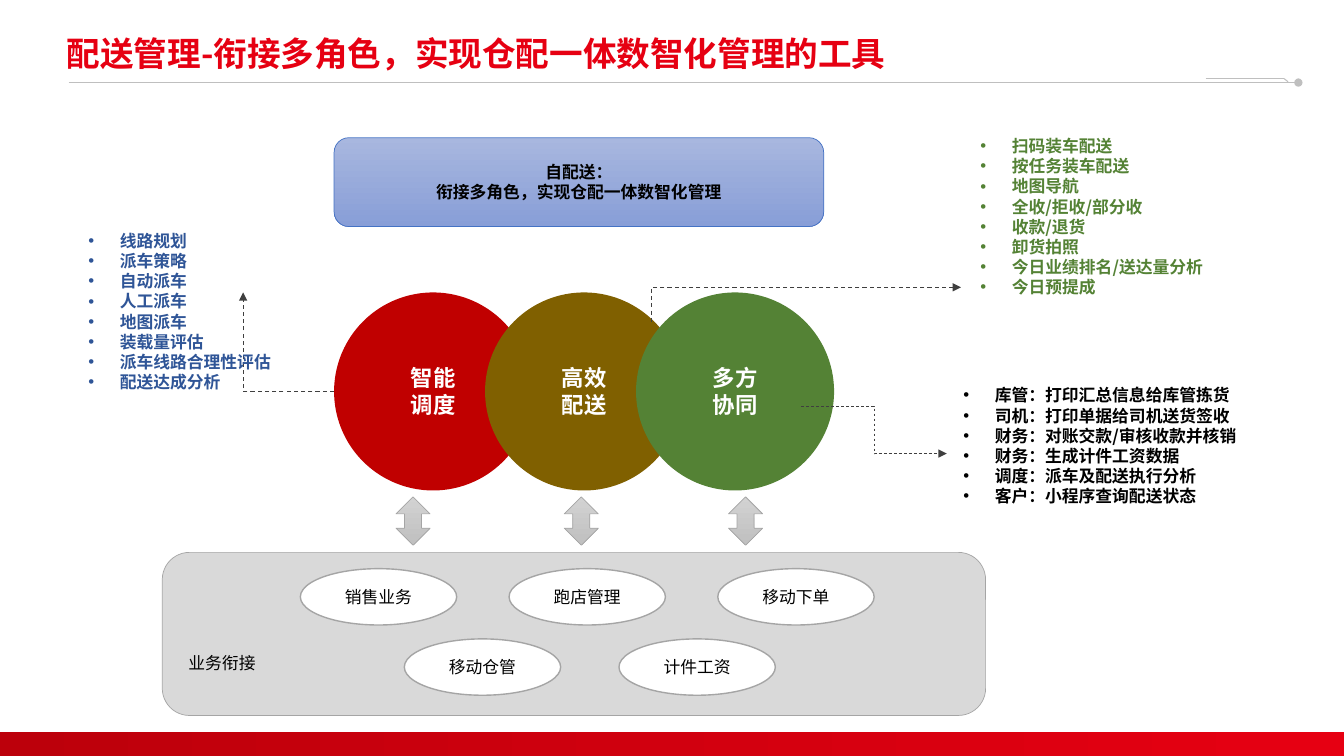
from dataclasses import dataclass

from pptx import Presentation
from pptx.dml.color import RGBColor
from pptx.enum.shapes import MSO_CONNECTOR, MSO_SHAPE
from pptx.enum.text import MSO_ANCHOR, PP_ALIGN
from pptx.oxml.ns import qn
from pptx.util import Cm, Pt
from lxml.etree import SubElement


@dataclass(frozen=True)
class Theme:
    font: str = "Noto Sans CJK SC"
    shape_font: str = "Calibri"
    title_size: int = 24
    circle_size: int = 16
    body_size: int = 12
    red: str = "E60012"
    dark_red: str = "BC000B"
    rule: str = "BFBFBF"
    black: str = "000000"
    white: str = "FFFFFF"
    crimson: str = "C00000"
    olive: str = "806000"
    green: str = "548235"
    navy: str = "2F5597"
    blue: str = "4472C4"
    banner: tuple = ("A8B7DF", "889ED7")
    arrow: tuple = ("D2D2D2", "C0C0C0")
    panel: str = "D9D9D9"
    outline: str = "A5A5A5"
    dash: str = "3F3F3F"


THEME = Theme()


@dataclass(frozen=True)
class Box:
    """A rectangle in centimetres."""
    left: float
    top: float
    width: float
    height: float

    def inner(self, left, top, width, height):
        return Box(self.left + left, self.top + top, width, height)

    def lengths(self):
        return [Cm(v) for v in (self.left, self.top, self.width, self.height)]


def rgb(color):
    return RGBColor.from_string(color)


def add_shape(page, kind, box, fill, line=None, line_width=0.5, angle=270):
    shape = page.shapes.add_shape(kind, *box.lengths())
    shape.shadow.inherit = False
    if isinstance(fill, tuple):
        shape.fill.gradient()
        shape.fill.gradient_angle = angle
        for stop, color in zip(shape.fill.gradient_stops, fill):
            stop.color.rgb = rgb(color)
    else:
        shape.fill.solid()
        shape.fill.fore_color.rgb = rgb(fill)
    if line:
        shape.line.color.rgb = rgb(line)
        shape.line.width = Pt(line_width)
    else:
        shape.line.fill.background()
    return shape


def style(para, size, color, bold=False, font=THEME.font):
    para.font.name = font
    para.font.size = Pt(size)
    para.font.bold = bold
    para.font.color.rgb = rgb(color)


def write_centred(shape, lines, size, color, bold=False, font=THEME.font):
    frame = shape.text_frame
    frame.vertical_anchor = MSO_ANCHOR.MIDDLE
    frame.text = "\n".join(lines)
    for para in frame.paragraphs:
        para.alignment = PP_ALIGN.CENTER
        style(para, size, color, bold, font)


def add_line(page, start, end, color, width=0.75, preset="line", dashed=False, **ends):
    kind = MSO_CONNECTOR.STRAIGHT if preset == "line" else MSO_CONNECTOR.ELBOW
    line = page.shapes.add_connector(kind, *[Cm(v) for v in (*start, *end)])
    line.line.color.rgb = rgb(color)
    line.line.width = Pt(width)
    properties = line._element.spPr
    properties.find(qn("a:prstGeom")).set("prst", preset)
    outline = properties.find(qn("a:ln"))
    if dashed:
        SubElement(outline, qn("a:prstDash")).set("val", "dash")
    for end_name, end_type in ends.items():
        SubElement(outline, qn(f"a:{end_name}")).set("type", end_type)
    SubElement(properties, qn("a:effectLst"))


def add_heading(page, box, text):
    # Title with the decorated rule below it
    title = page.shapes.title
    title.left, title.top, title.width, title.height = box.lengths()
    frame = title.text_frame
    frame.text = text
    frame.word_wrap = False
    frame.margin_left = 0
    frame.vertical_anchor = MSO_ANCHOR.MIDDLE
    para = frame.paragraphs[0]
    para.alignment = PP_ALIGN.LEFT
    para.line_spacing = 0.9
    style(para, THEME.title_size, THEME.red, True)

    rule_y = box.top + 1.32
    step_y = rule_y - 0.1
    step_x = box.left + 30.68
    add_line(page, (box.left + 0.05, rule_y), (box.left + 31.04, rule_y), THEME.rule, tailEnd="oval")
    add_line(page, (box.left + 28.7, step_y), (step_x, step_y), THEME.rule)
    add_line(page, (step_x, step_y), (step_x + 0.1, step_y + 0.08), THEME.rule)


def add_circles(page, box, circles):
    # Overlapping circles, spread evenly from the left edge to the right edge
    diameter = box.height
    step = (box.width - diameter) / (len(circles) - 1)
    for index, (lines, color) in enumerate(circles):
        circle = add_shape(page, MSO_SHAPE.FLOWCHART_CONNECTOR,
                           box.inner(index * step, 0, diameter, diameter), color)
        write_centred(circle, lines, THEME.circle_size, THEME.white, True)


def add_bullets(page, box, items, color):
    frame = page.shapes.add_textbox(*box.lengths()).text_frame
    frame.word_wrap = True
    frame.text = "\n".join(items)
    for para in frame.paragraphs:
        properties = para._p.get_or_add_pPr()
        properties.set("marL", str(Cm(0.79)))
        properties.set("indent", str(-Cm(0.79)))
        SubElement(properties, qn("a:buFont")).set("typeface", "Arial")
        SubElement(properties, qn("a:buChar")).set("char", "•")
        style(para, THEME.body_size, color, True)


def add_banner(page, box, lines):
    banner = add_shape(page, MSO_SHAPE.ROUNDED_RECTANGLE, box, THEME.banner, THEME.blue)
    write_centred(banner, lines, THEME.body_size, THEME.black, True, THEME.shape_font)


def add_business_panel(page, box, label, rows):
    # Grey panel, its label and two rows of ovals
    add_shape(page, MSO_SHAPE.ROUNDED_RECTANGLE, box, THEME.panel, THEME.outline)
    frame = page.shapes.add_textbox(*box.inner(0.41, 2.41, 2.24, 0.76).lengths()).text_frame
    frame.word_wrap = False
    frame.text = label
    style(frame.paragraphs[0], THEME.body_size, THEME.black)
    for left, top, step, names in rows:
        for index, name in enumerate(names):
            oval = add_shape(page, MSO_SHAPE.OVAL, box.inner(left + index * step, top, 3.94, 1.42),
                             THEME.white, THEME.outline, 1)
            write_centred(oval, [name], THEME.body_size, THEME.black, font=THEME.shape_font)


def add_exchange_arrows(page, box, offsets):
    for offset in offsets:
        add_shape(page, MSO_SHAPE.UP_DOWN_ARROW, box.inner(offset, 0, 0.86, box.height),
                  THEME.arrow, THEME.outline)


def add_callout_lines(page, box):
    # Dashed elbows from the circles to their lists
    def at(x, y):
        return box.left + x, box.top + y

    add_line(page, at(0, 2.49), at(-2.29, 0), THEME.dash, preset="bentConnector2",
             dashed=True, tailEnd="triangle")
    add_line(page, at(11.77, 2.87), at(15.44, 4.06), THEME.dash, 0.5, "bentConnector3",
             True, tailEnd="triangle")
    add_line(page, at(15.8, -0.13), at(8, 0.74), THEME.dash, preset="bentConnector2",
             dashed=True, headEnd="triangle")


def main():
    deck = Presentation()
    deck.slide_width, deck.slide_height = Cm(33.87), Cm(19.05)
    page = deck.slides.add_slide(deck.slide_layouts[5])

    # Frame of the page
    add_shape(page, MSO_SHAPE.RECTANGLE, Box(0, 18.44, 33.87, 0.61),
              (THEME.dark_red, THEME.red), angle=0)
    add_heading(page, Box(1.68, 0.76, 25.6, 1.27), "配送管理-衔接多角色，实现仓配一体数智化管理的工具")

    # Delivery roles
    add_banner(page, Box(8.42, 3.47, 12.34, 2.24), ["自配送：", "衔接多角色，实现仓配一体数智化管理"])
    circles = Box(8.42, 7.37, 12.6, 4.99)
    add_circles(page, circles, [(["智能", "调度"], THEME.crimson),
                                (["高效", "配送"], THEME.olive),
                                (["多方", "协同"], THEME.green)])
    add_callout_lines(page, circles)
    add_bullets(page, Box(1.98, 5.69, 5.16, 4.37),
                ["线路规划", "派车策略", "自动派车", "人工派车", "地图派车", "装载量评估",
                 "派车线路合理性评估", "配送达成分析"], THEME.navy)
    add_bullets(page, Box(24.46, 3.3, 6.2, 4.37),
                ["扫码装车配送", "按任务装车配送", "地图导航", "全收/拒收/部分收", "收款/退货",
                 "卸货拍照", "今日业绩排名/送达量分析", "今日预提成"], THEME.green)
    add_bullets(page, Box(24.03, 9.58, 7.47, 3.33),
                ["库管：打印汇总信息给库管拣货", "司机：打印单据给司机送货签收",
                 "财务：对账交款/审核收款并核销", "财务：生成计件工资数据",
                 "调度：派车及配送执行分析", "客户：小程序查询配送状态"], THEME.black)

    # Business links
    add_exchange_arrows(page, Box(9.98, 12.52, 9.24, 1.22), [0, 4.24, 8.38])
    add_business_panel(page, Box(4.09, 13.92, 20.75, 4.11), "业务衔接",
                       [(3.48, 0.41, 5.26, ["销售业务", "跑店管理", "移动下单"]),
                        (6.1, 2.18, 5.41, ["移动仓管", "计件工资"])])
    deck.save("out.pptx")


if __name__ == "__main__":
    main()
